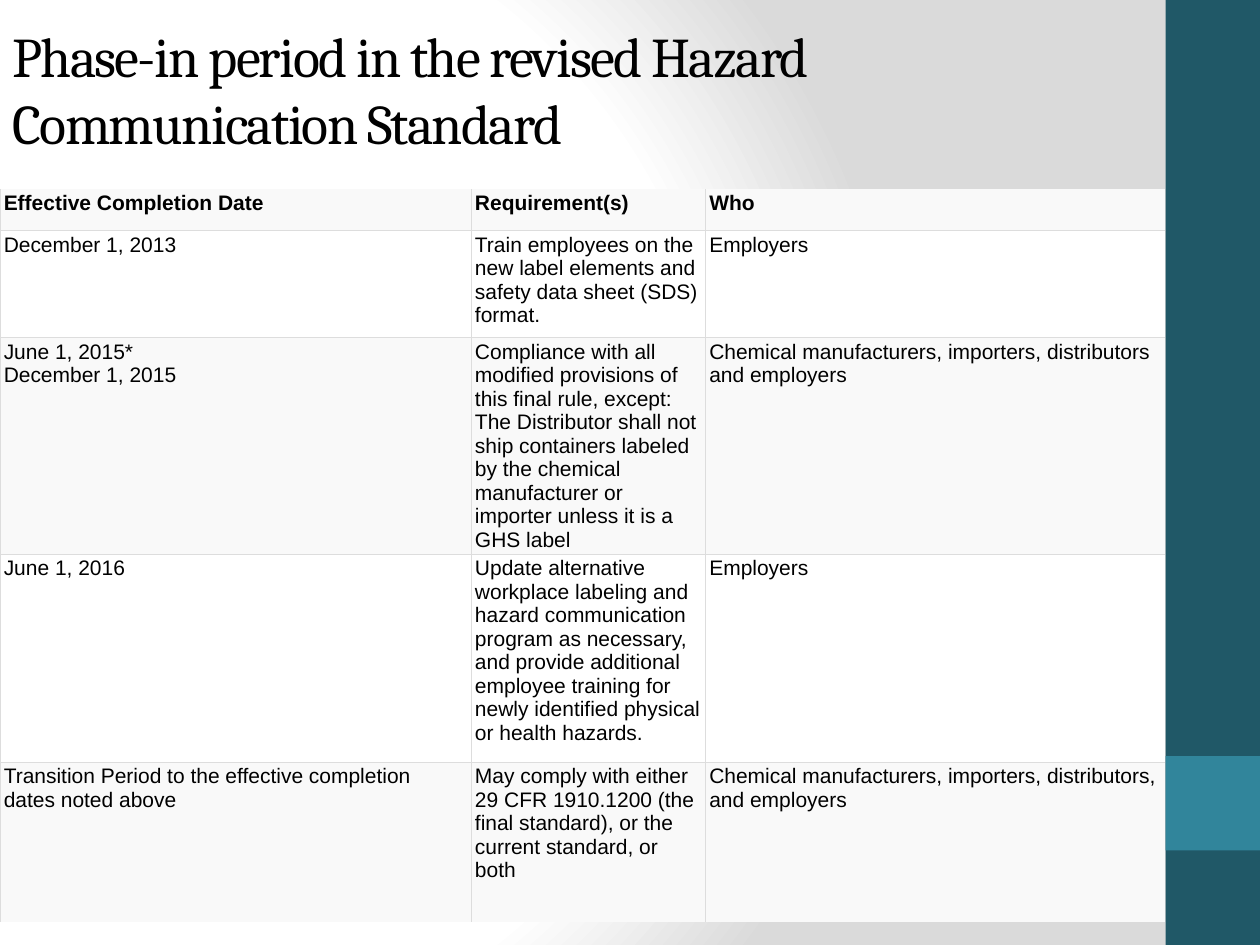
from lxml import etree
from pptx import Presentation
from pptx.dml.color import RGBColor
from pptx.enum.shapes import MSO_SHAPE as Shape
from pptx.enum.text import MSO_ANCHOR as Anchor, PP_ALIGN as Align
from pptx.oxml import parse_xml
from pptx.oxml.ns import nsdecls, qn
from pptx.util import Inches, Pt

BLACK = RGBColor(0x00, 0x00, 0x00)
WHITE = RGBColor(0xFF, 0xFF, 0xFF)
PALE_GREY = RGBColor(0xF9, 0xF9, 0xF9)
BACKGROUND_GREY = RGBColor(0xDA, 0xDA, 0xDA)
BORDER_GREY = RGBColor(0xDD, 0xDD, 0xDD)
DARK_TEAL = RGBColor(0x20, 0x58, 0x67)
TEAL = RGBColor(0x31, 0x85, 0x9B)

COLUMN_WIDTHS = [3.74, 1.86, 3.65]
ROW_HEIGHTS = [0.33, 0.85, 1.65, 1.65, 1.27]
ROWS = [
    ["Effective Completion Date", "Requirement(s)", "Who"],
    ["December 1, 2013",
     "Train employees on the new label elements and safety data sheet (SDS) format.",
     "Employers"],
    ["June 1, 2015*\nDecember 1, 2015",
     "Compliance with all modified provisions of this final rule, except:\n"
     "The Distributor shall not ship containers labeled by the chemical "
     "manufacturer or importer unless it is a GHS label",
     "Chemical manufacturers, importers, distributors and employers"],
    ["June 1, 2016",
     "Update alternative workplace labeling and hazard communication program as "
     "necessary, and provide additional employee training for newly identified "
     "physical or health hazards.",
     "Employers"],
    ["Transition Period to the effective completion dates noted above",
     "May comply with either 29 CFR 1910.1200 (the final standard), or the "
     "current standard, or both",
     "Chemical manufacturers, importers, distributors, and employers"],
]


def set_background(slide):
    """Fill the slide with a circular gradient from white to grey."""
    stops = "".join(
        f'<a:gs pos="{position * 1000}"><a:srgbClr val="{color}"/></a:gs>'
        for position, color in [(0, WHITE), (75, WHITE), (100, BACKGROUND_GREY)])
    background = parse_xml(
        f'<p:bg {nsdecls("p", "a")}><p:bgPr><a:gradFill rotWithShape="1">'
        f'<a:gsLst>{stops}</a:gsLst><a:path path="circle">'
        '<a:fillToRect l="20000" t="50000" r="100000" b="50000"/></a:path>'
        '</a:gradFill><a:effectLst/></p:bgPr></p:bg>')
    slide.element.cSld.insert(0, background)


def write_text(text_frame, text, font="Arial", size=12, bold=False, color=BLACK,
               spacing=None):
    """Write one paragraph per line; spacing is between letters, in points."""
    text_frame.text = text
    for paragraph in text_frame.paragraphs:
        paragraph.alignment = Align.LEFT
        for run in paragraph.runs:
            run.font.name = font
            run.font.size = Pt(size)
            run.font.bold = bold
            run.font.color.rgb = color
            if spacing is not None:
                run.font._element.set("spc", str(int(spacing * 100)))


def add_block(slide, top, height, color):
    block = slide.shapes.add_shape(
        Shape.RECTANGLE, Inches(9.25), Inches(top), Inches(0.75), Inches(height))
    block.shadow.inherit = False
    block.fill.solid()
    block.fill.fore_color.rgb = color
    block.line.fill.background()


def add_title(slide, text):
    title = slide.shapes.title
    title.left, title.top = Inches(0), Inches(0.08)
    title.width, title.height = Inches(8.33), Inches(1.25)
    title.text_frame.word_wrap = True
    title.text_frame.vertical_anchor = Anchor.MIDDLE
    write_text(title.text_frame, text, font="Cambria", size=32, spacing=-1)


def set_borders(cell, visible):
    """Draw the sides named in visible (of L, R, T, B) and clear the others."""
    properties = cell._tc.get_or_add_tcPr()
    for side in "LRTB":
        line = etree.SubElement(properties, qn(f"a:ln{side}"), w=str(Pt(0.6)))
        if side in visible:
            fill = etree.SubElement(line, qn("a:solidFill"))
            etree.SubElement(fill, qn("a:srgbClr"), val=str(BORDER_GREY))
        else:
            etree.SubElement(line, qn("a:noFill"))


def add_schedule(slide):
    last_row, last_column = len(ROWS) - 1, len(COLUMN_WIDTHS) - 1
    table = slide.shapes.add_table(
        len(ROWS), len(COLUMN_WIDTHS), Inches(0), Inches(1.5),
        Inches(sum(COLUMN_WIDTHS)), Inches(sum(ROW_HEIGHTS))).table
    table.first_row = table.horz_banding = False
    for column, width in zip(table.columns, COLUMN_WIDTHS):
        column.width = Inches(width)
    for row, height in zip(table.rows, ROW_HEIGHTS):
        row.height = Inches(height)
    for row_index, texts in enumerate(ROWS):
        for column_index, text in enumerate(texts):
            cell = table.cell(row_index, column_index)
            cell.margin_left = cell.margin_right = Inches(0.03)
            cell.margin_top = cell.margin_bottom = Inches(0.02)
            cell.vertical_anchor = Anchor.TOP
            visible = "L"
            visible += "R" if column_index < last_column else ""
            visible += "T" if row_index > 0 else ""
            visible += "B" if row_index < last_row else ""
            set_borders(cell, visible)
            cell.fill.solid()
            cell.fill.fore_color.rgb = WHITE if row_index % 2 else PALE_GREY
            write_text(cell.text_frame, text, bold=row_index == 0)


def main():
    presentation = Presentation()
    presentation.slide_width, presentation.slide_height = Inches(10), Inches(7.5)
    slide = presentation.slides.add_slide(presentation.slide_layouts[5])
    set_background(slide)
    add_block(slide, 0, 7.5, DARK_TEAL)
    add_block(slide, 6, 0.75, TEAL)
    add_title(slide, "Phase-in period in the revised Hazard Communication Standard")
    add_schedule(slide)
    presentation.save("out.pptx")


if __name__ == "__main__":
    main()
